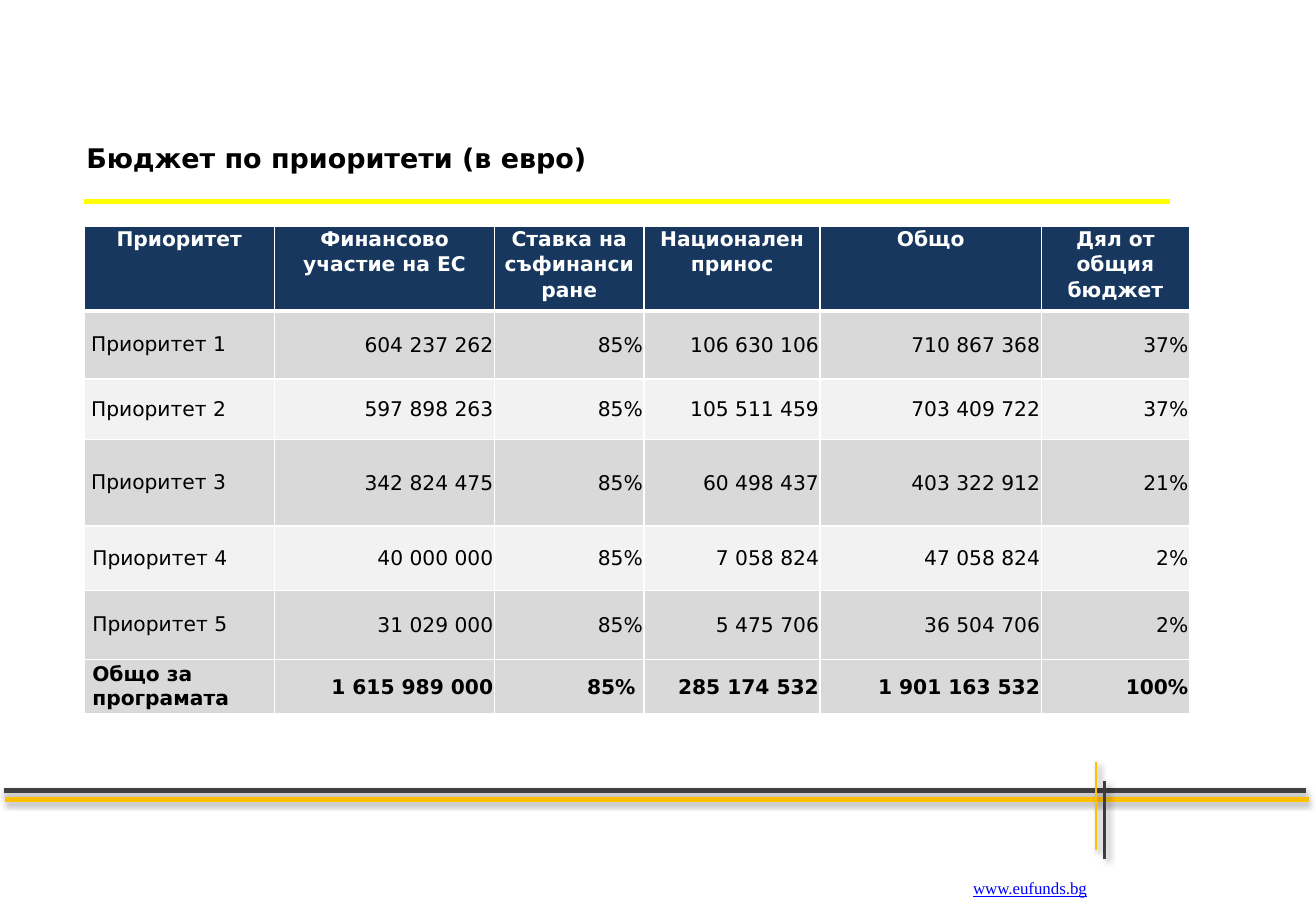
"""Build the slide with the programme budget by priority."""
from dataclasses import dataclass

from lxml import etree
from pptx import Presentation
from pptx.dml.color import RGBColor
from pptx.enum.shapes import MSO_CONNECTOR
from pptx.enum.text import MSO_ANCHOR, MSO_AUTO_SIZE, PP_ALIGN
from pptx.oxml.ns import qn
from pptx.util import Inches, Pt

STRAIGHT = MSO_CONNECTOR.STRAIGHT
TOP, MIDDLE = MSO_ANCHOR.TOP, MSO_ANCHOR.MIDDLE
LEFT, CENTER, RIGHT = PP_ALIGN.LEFT, PP_ALIGN.CENTER, PP_ALIGN.RIGHT
NO_FIT = MSO_AUTO_SIZE.NONE


@dataclass(frozen=True)
class Theme:
    """Hold the colours, fonts and type sizes."""
    navy: str = "17375E"
    band: str = "D9D9D9"
    pale: str = "F2F2F2"
    white: str = "FFFFFF"
    black: str = "000000"
    gray: str = "404040"
    gold: str = "FFC000"
    yellow: str = "FFFF00"
    blue: str = "0000FF"
    sans: str = "DejaVu Sans"
    serif: str = "Times New Roman"
    head: int = 16
    body: int = 12
    small: int = 10


HEADER = ["Приоритет", "Финансово участие на ЕС", "Ставка на съфинансиране",
          "Национален принос", "Общо", "Дял от общия бюджет"]
BUDGET = [
    ["Приоритет 1", "604 237 262", "85%", "106 630 106", "710 867 368", "37%"],
    ["Приоритет 2", "597 898 263", "85%", "105 511 459", "703 409 722", "37%"],
    ["Приоритет 3", "342 824 475", "85%", "60 498 437", "403 322 912", "21%"],
    ["Приоритет 4", "40 000 000", "85%", "7 058 824", "47 058 824", "2%"],
    ["Приоритет 5", "31 029 000", "85%", "5 475 706", "36 504 706", "2%"],
    ["Общо за програмата", "1 615 989 000", "85%", "285 174 532",
     "1 901 163 532", "100%"],
]
WIDTHS = [1.57, 1.81, 1.23, 1.45, 1.82, 1.22]
HEIGHTS = [0.7, 0.56, 0.5, 0.71, 0.53, 0.57, 0.45]
FLAT = (35, 3.1, 1.8, 90)
SLANT = (40, 4, 3, 45)


class Deck:
    """Draw styled elements on the current slide."""

    def __init__(self, theme):
        """Start a deck with one title slide."""
        self.theme = theme
        self.prs = Presentation()
        self.prs.slide_width = Inches(10.83)
        self.prs.slide_height = Inches(7.5)
        self.slide = self.prs.slides.add_slide(self.prs.slide_layouts[5])

    def style(self, para, size, color, bold=False, face=None):
        """Set the font of a paragraph."""
        font = para.font
        font.name = face or self.theme.sans
        font.size = Pt(size)
        font.bold = bold
        font.color.rgb = RGBColor.from_string(color)

    def title(self, text, x, y, w, h):
        """Fill the title placeholder."""
        shape = self.slide.shapes.title
        shape.left, shape.top = Inches(x), Inches(y)
        shape.width, shape.height = Inches(w), Inches(h)
        frame = shape.text_frame
        frame.text = text
        frame.auto_size = NO_FIT
        frame.vertical_anchor = MIDDLE
        frame.margin_left = Inches(0.41)
        para = frame.paragraphs[0]
        para.alignment = LEFT
        self.style(para, self.theme.head, self.theme.black, True)

    def link(self, text, x, y, w, h):
        """Add an underlined web address."""
        box = self.slide.shapes.add_textbox(
            Inches(x), Inches(y), Inches(w), Inches(h))
        frame = box.text_frame
        frame.text = text
        frame.word_wrap = False
        para = frame.paragraphs[0]
        self.style(para, self.theme.small, self.theme.blue,
                   face=self.theme.serif)
        para.font.underline = True

    def line(self, start, end, color, width, shade=None):
        """Add a straight line, with a shadow if one is given."""
        rule = self.slide.shapes.add_connector(
            STRAIGHT, *(Inches(n) for n in start + end))
        rule.line.color.rgb = RGBColor.from_string(color)
        rule.line.width = Pt(width)
        effect = etree.SubElement(rule.element.spPr, qn("a:effectLst"))
        if shade:
            alpha, blur, dist, angle = shade
            shadow = etree.SubElement(
                effect, qn("a:outerShdw"), blurRad=str(Pt(blur)),
                dist=str(Pt(dist)), dir=str(angle * 60000), rotWithShape="0")
            tint = etree.SubElement(shadow, qn("a:srgbClr"),
                                    val=self.theme.black)
            etree.SubElement(tint, qn("a:alpha"), val=str(alpha * 1000))

    def border(self, cell, row):
        """Edge a cell in white, thicker under the header."""
        props = cell._tc.get_or_add_tcPr()
        thick = {(0, "lnB"), (1, "lnT")}
        for side in ("lnL", "lnR", "lnT", "lnB"):
            width = Pt(3 if (row, side) in thick else 1)
            edge = etree.SubElement(props, qn("a:" + side), w=str(width))
            fill = etree.SubElement(edge, qn("a:solidFill"))
            etree.SubElement(fill, qn("a:srgbClr"), val=self.theme.white)

    def cell(self, cell, text, row, col):
        """Fill and format one table cell."""
        theme, last = self.theme, len(BUDGET)
        head, total = row == 0, row == last
        loose = head or col == 0 or (total and col == 2)
        side = Inches((0.07 if row > 3 else 0.06) if loose else 0.01)
        cell.margin_left = cell.margin_right = side
        cell.margin_top = Inches(0 if loose else 0.01)
        cell.margin_bottom = 0
        cell.vertical_anchor = TOP if head else MIDDLE
        self.border(cell, row)
        shade = theme.band if row % 2 or total else theme.pale
        cell.fill.solid()
        cell.fill.fore_color.rgb = RGBColor.from_string(
            theme.navy if head else shade)
        cell.text = text
        para = cell.text_frame.paragraphs[0]
        para.alignment = CENTER if head else RIGHT if col else LEFT
        if head or (loose and col):
            para.line_spacing = 1.07
        self.style(para, theme.body, theme.white if head else theme.black,
                   head or total)

    def table(self, rows, x, y):
        """Add the budget table."""
        table = self.slide.shapes.add_table(
            len(rows), len(WIDTHS), Inches(x), Inches(y),
            Inches(sum(WIDTHS)), Inches(sum(HEIGHTS))).table
        table.horz_banding = False
        for column, width in zip(table.columns, WIDTHS):
            column.width = Inches(width)
        for r, (values, height) in enumerate(zip(rows, HEIGHTS)):
            table.rows[r].height = Inches(height)
            for c, text in enumerate(values):
                self.cell(table.cell(r, c), text, r, c)


def main():
    """Draw the slide and save it."""
    theme = Theme()
    deck = Deck(theme)
    deck.line((0.03, 6.51), (10.75, 6.51), theme.gray, 3, FLAT)
    deck.line((0.04, 6.58), (10.77, 6.58), theme.gold, 3, FLAT)
    deck.line((9.09, 6.43), (9.09, 7.07), theme.gray, 1.5, SLANT)
    deck.line((9.02, 6.27), (9.02, 7), theme.gold, 1.5, SLANT)
    deck.link("www.eufunds.bg", 7.91, 7.18, 1.16, 0.27)
    deck.table([HEADER] + BUDGET, 0.69, 1.86)
    deck.title("Бюджет по приоритети (в евро)", 0.3, 0.92, 9.33, 0.76)
    deck.line((9.63, 1.66), (0.69, 1.66), theme.yellow, 3)
    deck.prs.save("out.pptx")


if __name__ == "__main__":
    main()
